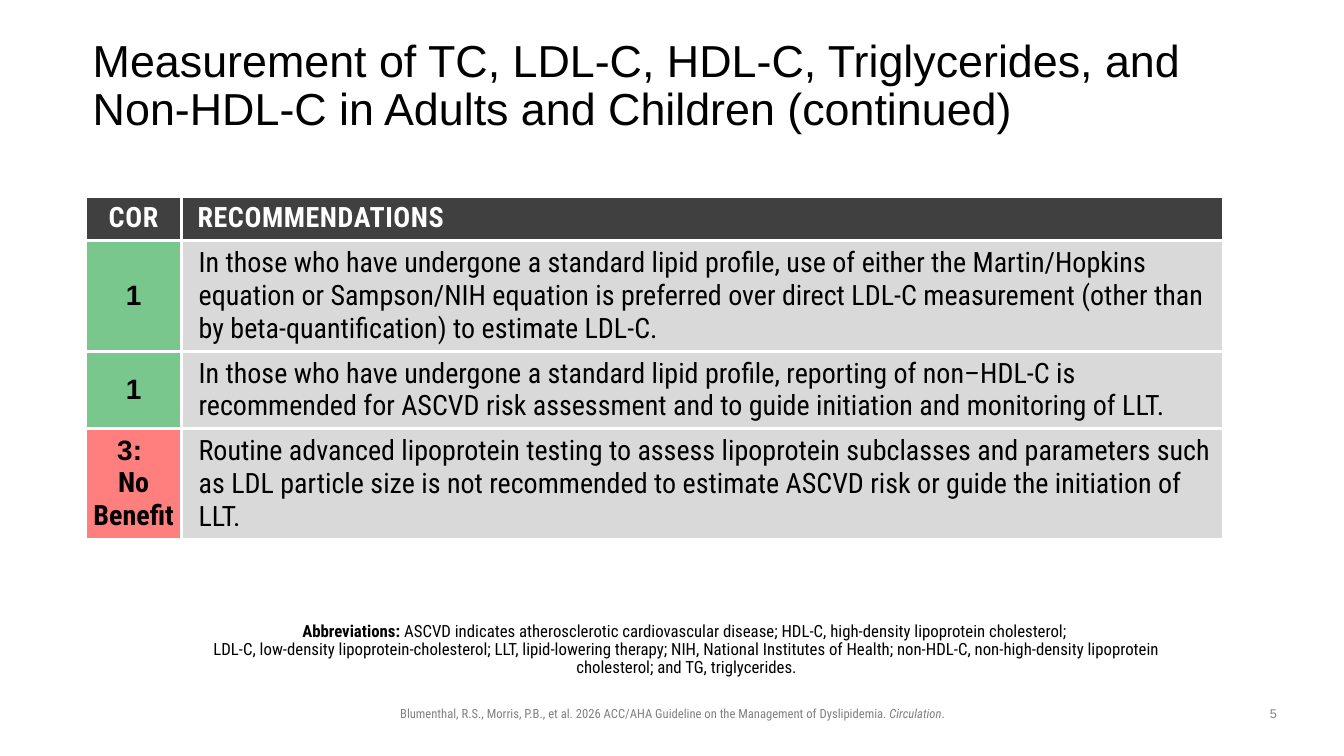
import pptx
import pptx.util
import pptx.dml.color
import pptx.enum.text
import pptx.oxml
import pptx.oxml.ns

Inches = pptx.util.Inches
Pt = pptx.util.Pt
ALIGN = pptx.enum.text.PP_ALIGN
ANCHOR = pptx.enum.text.MSO_ANCHOR

COLORS = {
    "text": "000000", "muted": "808080", "white": "FFFFFF", "header": "404040",
    "benefit": "79C78D", "no_benefit": "FF7F7F", "body": "D9D9D9",
}
BODY_FONT = "Roboto Condensed"
PLAIN_FONT = "Arial"

COLUMN_WIDTHS = (0.95, 10.33)
# Height, class of recommendation as runs, its color, recommendation
RECOMMENDATIONS = [
    (1.08, [("1", {"font": PLAIN_FONT})], "benefit",
     "In those who have undergone a standard lipid profile, use of either the "
     "Martin/Hopkins equation or Sampson/NIH equation is preferred over direct LDL-C "
     "measurement (other than by beta-quantification) to estimate LDL-C."),
    (0.76, [("1", {"font": PLAIN_FONT})], "benefit",
     "In those who have undergone a standard lipid profile, reporting of non–HDL-C is "
     "recommended for ASCVD risk assessment and to guide initiation and monitoring of LLT."),
    (1.06, [("3: \n", {"font": PLAIN_FONT}), ("No Benefit", {})], "no_benefit",
     "Routine advanced lipoprotein testing to assess lipoprotein subclasses and "
     "parameters such as LDL particle size is not recommended to estimate ASCVD risk "
     "or guide the initiation of LLT."),
]


def rgb(name):
    return pptx.dml.color.RGBColor.from_string(COLORS[name])


def write_run(paragraph, text, size=20, font=BODY_FONT, color="text",
              bold=False, italic=False, spacing=0):
    """Add formatted text; a newline becomes a line break."""
    for index, line in enumerate(text.split("\n")):
        if index:
            paragraph.add_line_break()
        if not line:
            continue
        run = paragraph.add_run()
        run.text = line
        run.font.size = Pt(size)
        run.font.name = font
        run.font.bold = bold
        run.font.italic = italic
        run.font.color.rgb = rgb(color)
        if spacing:
            run.font._element.set("spc", str(round(spacing * 100)))


def add_text(slide, box, runs, align=ALIGN.LEFT, anchor=ANCHOR.TOP,
             insets=(0.1, 0.05, 0.1, 0.05), line_spacing=1.0, **style):
    shape = slide.shapes.add_textbox(*map(Inches, box))
    frame = shape.text_frame
    frame.word_wrap = True
    frame.vertical_anchor = anchor
    (frame.margin_left, frame.margin_top,
     frame.margin_right, frame.margin_bottom) = map(Inches, insets)
    paragraph = frame.paragraphs[0]
    paragraph.alignment = align
    paragraph.line_spacing = line_spacing
    for text, changes in runs:
        write_run(paragraph, text, **{**style, **changes})


def add_borders(cell):
    properties = cell._tc.get_or_add_tcPr()
    for index, side in enumerate(("lnL", "lnR", "lnT", "lnB")):
        properties.insert(index, pptx.oxml.parse_xml(
            f'<a:{side} {pptx.oxml.ns.nsdecls("a")} w="{Pt(2.25)}"><a:solidFill>'
            f'<a:srgbClr val="{COLORS["white"]}"/></a:solidFill></a:{side}>'))


def fill_cell(cell, fill, runs, align=ALIGN.LEFT, indent=0, margin=0.05, **style):
    cell.fill.solid()
    cell.fill.fore_color.rgb = rgb(fill)
    add_borders(cell)
    cell.vertical_anchor = ANCHOR.MIDDLE
    cell.margin_left = cell.margin_right = Inches(margin)
    cell.margin_top = cell.margin_bottom = Inches(0.05)
    paragraph = cell.text_frame.paragraphs[0]
    paragraph.alignment = align
    if indent:
        properties = paragraph._p.get_or_add_pPr()
        properties.set("marL", str(Inches(indent)))
        properties.set("indent", "0")
    for text, changes in runs:
        write_run(paragraph, text, **{**style, **changes})


def add_recommendations(slide, left, top):
    heights = [0.41] + [row[0] for row in RECOMMENDATIONS]
    table = slide.shapes.add_table(
        len(heights), len(COLUMN_WIDTHS), Inches(left), Inches(top),
        Inches(sum(COLUMN_WIDTHS)), Inches(sum(heights))).table
    table.horz_banding = False
    for column, width in zip(table.columns, COLUMN_WIDTHS):
        column.width = Inches(width)
    for row, height in zip(table.rows, heights):
        row.height = Inches(height)

    # Header row
    header = {"color": "white", "bold": True, "margin": 0.1}
    fill_cell(table.cell(0, 0), "header", [("COR", {})],
              align=ALIGN.CENTER, spacing=0.5, **header)
    fill_cell(table.cell(0, 1), "header", [("RECOMMENDATIONS", {})],
              indent=0.06, spacing=0.4, **header)

    # One row per recommendation
    for index, (_, grade, color, advice) in enumerate(RECOMMENDATIONS, start=1):
        fill_cell(table.cell(index, 0), color, grade, align=ALIGN.CENTER, bold=True)
        fill_cell(table.cell(index, 1), "body", [(advice, {})], indent=0.12)


def add_title(slide, box):
    add_text(slide, box, [
        ("Measurement of TC, LDL-C, HDL-C, Triglycerides, and Non-HDL-C in Adults "
         "and Children (continued)", {})],
        anchor=ANCHOR.MIDDLE, insets=(0, 0, 0, 0), line_spacing=0.9,
        size=32, font=PLAIN_FONT)


def add_abbreviations(slide, box):
    add_text(slide, box, [
        ("Abbreviations: ", {"bold": True}),
        ("ASCVD indicates atherosclerotic cardiovascular disease; HDL-C, high-density "
         "lipoprotein cholesterol; \nLDL-C, low-density lipoprotein-cholesterol; LLT, "
         "lipid-lowering therapy; NIH, National Institutes of Health; non-HDL-C, "
         "non-high-density lipoprotein cholesterol; and TG, triglycerides.", {})],
        align=ALIGN.CENTER, anchor=ANCHOR.BOTTOM, insets=(0, 0.05, 0.1, 0.05),
        line_spacing=0.9, size=12)


def add_footer(slide, top):
    style = {"align": ALIGN.CENTER, "size": 9, "color": "muted"}
    add_text(slide, (2.36, top, 8.62, 0.25), [
        ("Blumenthal, R.S., Morris, P.B., et al. 2026 ACC/AHA Guideline on the "
         "Management of Dyslipidemia. ", {}),
        ("Circulation", {"italic": True}),
        (".", {})], **style)
    add_text(slide, (12.42, top, 0.42, 0.26), [("5", {})], font=PLAIN_FONT, **style)


def main():
    presentation = pptx.Presentation()
    presentation.slide_width = Inches(13.33)
    presentation.slide_height = Inches(7.5)
    slide = presentation.slides.add_slide(presentation.slide_layouts[6])
    add_title(slide, (0.92, 0.4, 11.5, 0.93))
    add_recommendations(slide, 0.85, 1.95)
    add_abbreviations(slide, (1.74, 6.11, 10.24, 0.66))
    add_footer(slide, 6.95)
    presentation.save("out.pptx")


if __name__ == "__main__":
    main()
